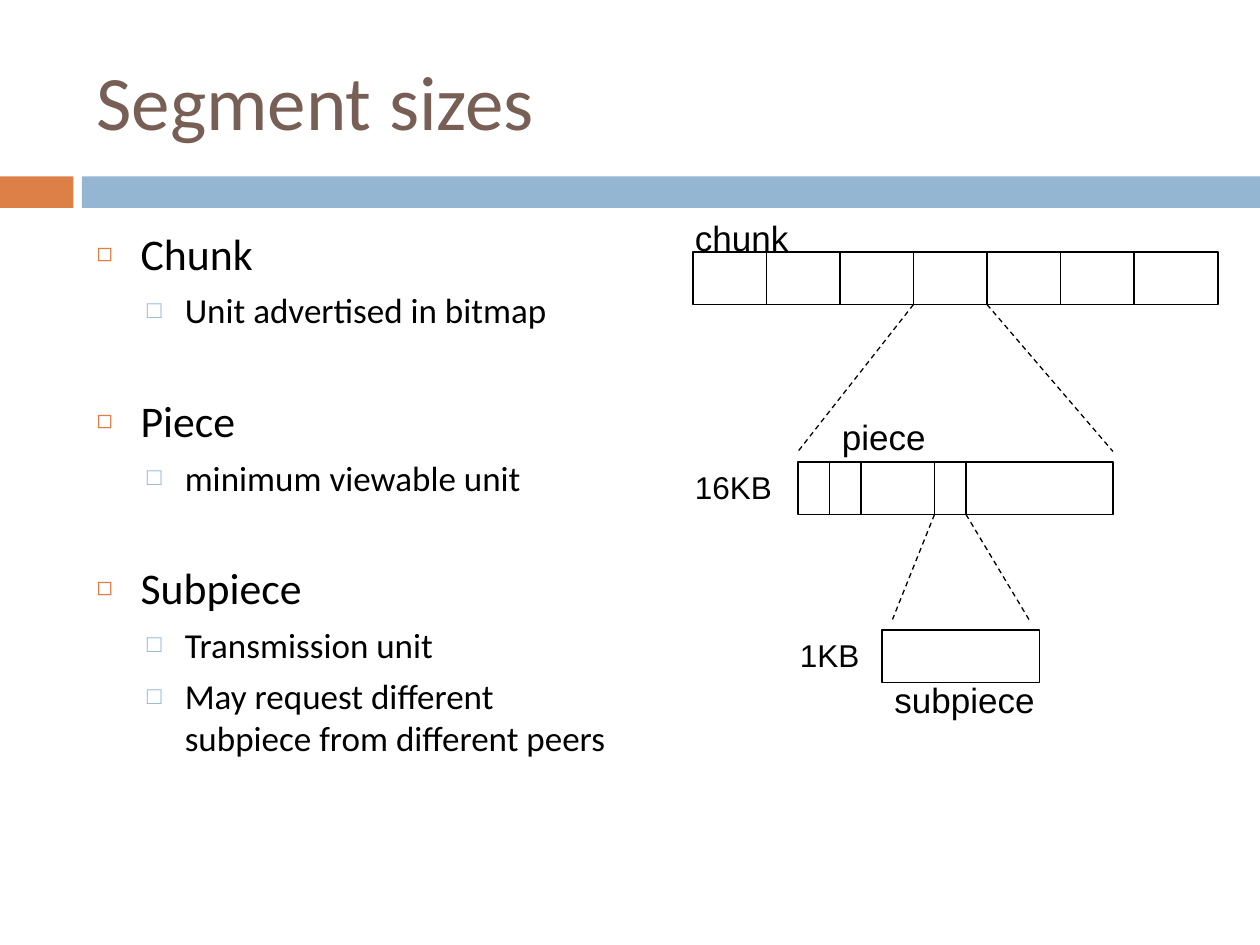
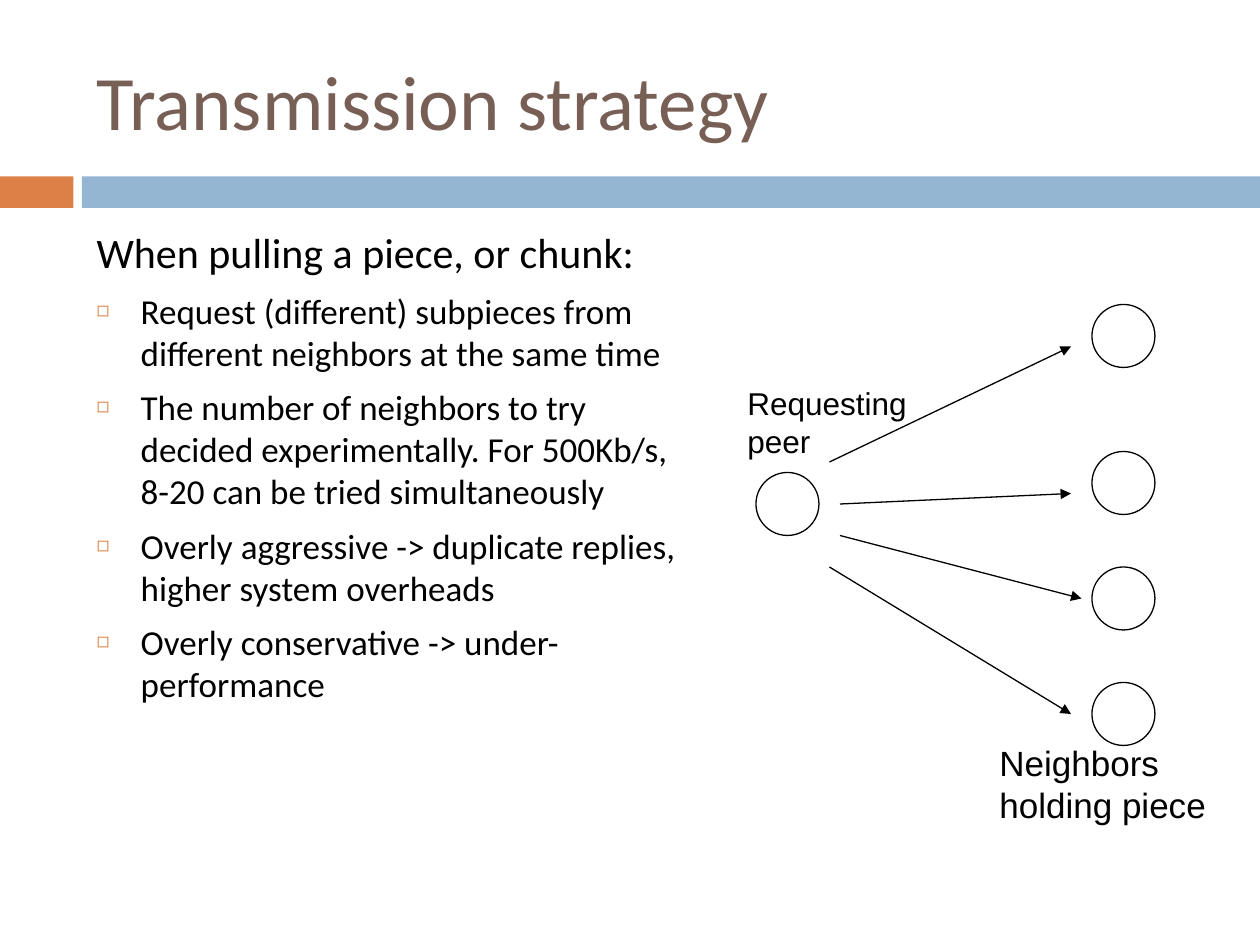
from lxml import etree
from pptx import Presentation
from pptx.dml.color import RGBColor
from pptx.enum.dml import MSO_LINE
from pptx.enum.shapes import MSO_CONNECTOR, MSO_SHAPE
from pptx.enum.text import MSO_ANCHOR, MSO_AUTO_SIZE, PP_ALIGN
from pptx.oxml.ns import qn
from pptx.util import Pt

RECTANGLE, OVAL = MSO_SHAPE.RECTANGLE, MSO_SHAPE.OVAL
STRAIGHT, DASH = MSO_CONNECTOR.STRAIGHT, MSO_LINE.DASH
LEFT, TOP, MIDDLE = PP_ALIGN.LEFT, MSO_ANCHOR.TOP, MSO_ANCHOR.MIDDLE
NO_AUTOFIT = MSO_AUTO_SIZE.NONE

BLACK, BROWN, ORANGE, BLUE = "000000", "775F55", "DD8047", "94B6D2"
HEADING_FONT, LABEL_FONT = "Calibri", "Arial"

# Bullet: character, colour, size in percent
MAIN_BULLET = ("◻", ORANGE, 60)
SUB_BULLET = ("□", BLUE, 70)

BAR_HEIGHT = 30
CALLOUT_GAP = 6
PEER_SIZE = 36


def rgb(color):
    return RGBColor.from_string(color)


def place(shape, left, top, width, height):
    shape.left, shape.top = Pt(left), Pt(top)
    shape.width, shape.height = Pt(width), Pt(height)


def set_bullet(para, bullet, margin, hanging):
    properties = para._p.get_or_add_pPr()
    properties.set("marL", str(Pt(margin)))
    properties.set("indent", str(-Pt(hanging)))
    if bullet is None:
        etree.SubElement(properties, qn("a:buNone"))
        return
    character, color, percent = bullet
    fill = etree.SubElement(properties, qn("a:buClr"))
    etree.SubElement(fill, qn("a:srgbClr"), val=color)
    etree.SubElement(properties, qn("a:buSzPct"), val=str(percent * 1000))
    etree.SubElement(properties, qn("a:buChar"), char=character)


def write(frame, text, size=20, color=BLACK, font=HEADING_FONT, before=0, level=0):
    """Add one formatted paragraph, using the first one if the frame is empty."""
    para = frame.add_paragraph() if frame.text else frame.paragraphs[0]
    para.level = level
    para.alignment = LEFT
    para.space_before = Pt(before)
    span = para.add_run()
    span.text = text
    span.font.size = Pt(size)
    span.font.name = font
    span.font.color.rgb = rgb(color)
    return para


def write_item(frame, text, size=20, before=7, bullet=MAIN_BULLET):
    para = write(frame, text, size=size, before=before)
    set_bullet(para, bullet, margin=25.2, hanging=25.2)


def write_subitem(frame, text):
    para = write(frame, text, before=5.5, level=1)
    set_bullet(para, SUB_BULLET, margin=50.4, hanging=21.6)


def add_label(page, text, left, top, width, height, size=20):
    box = page.shapes.add_textbox(Pt(left), Pt(top), Pt(width), Pt(height))
    box.text_frame.word_wrap = True
    write(box.text_frame, text, size=size, font=LABEL_FONT, before=2)


def add_outline(page, kind, left, top, width, height):
    shape = page.shapes.add_shape(kind, Pt(left), Pt(top), Pt(width), Pt(height))
    shape.shadow.inherit = False
    shape.fill.background()
    shape.line.color.rgb = rgb(BLACK)
    shape.line.width = Pt(0.75)
    return shape


def add_line(page, start, end, dash=None, arrow=False):
    ends = [Pt(value) for value in (*start, *end)]
    connector = page.shapes.add_connector(STRAIGHT, *ends)
    connector.line.color.rgb = rgb(BLACK)
    connector.line.width = Pt(0.75)
    if dash is not None:
        connector.line.dash_style = dash
    properties = connector.element.spPr
    if arrow:
        etree.SubElement(properties.find(qn("a:ln")), qn("a:tailEnd"), type="triangle")
    etree.SubElement(properties, qn("a:effectLst"))


def add_bar(page, left, top, width, dividers=()):
    """Draw a segment bar, split at the given x positions."""
    add_outline(page, RECTANGLE, left, top, width, BAR_HEIGHT)
    for x in dividers:
        add_line(page, (x, top), (x, top + BAR_HEIGHT))


def add_zoom(page, segment, bar_top, target, target_top):
    """Dashed lines from a segment of one bar to the wider bar below."""
    for start_x, end_x in zip(segment, target):
        add_line(page, (start_x, bar_top + BAR_HEIGHT),
                 (end_x, target_top - CALLOUT_GAP), dash=DASH)


def add_master_bands(deck, page):
    """Draw the two bands and move them to the slide master."""
    tree = deck.slide_master.shapes.element
    for left, width, color in ((0, 42, ORANGE), (46.8, 673.2, BLUE)):
        band = add_outline(page, RECTANGLE, left, 100.8, width, 18)
        band.fill.solid()
        band.fill.fore_color.rgb = rgb(color)
        band.line.fill.background()
        tree.insert(2, band.element)


def add_page(deck, title, body_width):
    """Add a titled slide and return it with the text frame of its body."""
    page = deck.slides.add_slide(deck.slide_layouts[1])
    heading, body = page.shapes.title, page.placeholders[1]
    place(heading, 48, 18, 642, 78)
    place(body, 48, 126, body_width, 356)
    for holder, anchor in ((heading, MIDDLE), (body, TOP)):
        holder.text_frame.word_wrap = True
        holder.text_frame.auto_size = NO_AUTOFIT
        holder.text_frame.vertical_anchor = anchor
    write(heading.text_frame, title, size=44, color=BROWN)
    return page, body.text_frame


def build_segment_sizes(deck):
    page, body = add_page(deck, "Segment sizes", 317.5)
    units = (
        ("Chunk", ["Unit advertised in bitmap"]),
        ("Piece", ["minimum viewable unit"]),
        ("Subpiece", ["Transmission unit",
                      "May request different subpiece from different peers"]),
    )
    for index, (unit, facts) in enumerate(units):
        write_item(body, unit, size=25, before=36 if index else 7)
        for fact in facts:
            write_subitem(body, fact)

    chunk_top, piece_top, subpiece_top = 144, 264, 360
    chunk_dividers = [396 + 42 * step for step in range(1, 7)]
    piece_dividers = [474, 492, 534, 552]
    add_bar(page, 396, chunk_top, 300, chunk_dividers)
    add_bar(page, 456, piece_top, 180, piece_dividers)
    add_bar(page, 504, subpiece_top, 90)
    add_zoom(page, chunk_dividers[2:4], chunk_top, (456, 636), piece_top)
    add_zoom(page, piece_dividers[2:], piece_top, (510, 588), subpiece_top)

    add_label(page, "16KB", 390, piece_top, 60, 28.8, size=18)
    add_label(page, "1KB", 450, subpiece_top, 60, 28.8, size=18)
    add_label(page, "chunk", 390, 120, 90, 31)
    add_label(page, "piece", 474, 234, 96, 31)
    add_label(page, "subpiece", 504, 384, 108, 31)
    return page


def build_transmission_strategy(deck):
    page, body = add_page(deck, "Transmission strategy", 353.5)
    write_item(body, "When pulling a piece, or chunk:", size=24, bullet=None)
    for advice in (
        "Request (different) subpieces from different neighbors at the same time",
        "The number of neighbors to try decided experimentally. "
        "For 500Kb/s, 8-20 can be tried simultaneously",
        "Overly aggressive -> duplicate replies, higher system overheads",
        "Overly conservative -> under-performance",
    ):
        write_item(body, advice)

    add_outline(page, OVAL, 432, 270, PEER_SIZE, PEER_SIZE)
    # Neighbor top, then request arrow start and end
    requests = (
        (174, (474, 264), (612, 198)),
        (258, (480, 288), (612, 282)),
        (324, (480, 306), (618, 342)),
        (390, (474, 324), (612, 408)),
    )
    for neighbor_top, start, end in requests:
        add_outline(page, OVAL, 624, neighbor_top, PEER_SIZE, PEER_SIZE)
        add_line(page, start, end, arrow=True)
    add_label(page, "Neighbors holding piece", 564, 420, 138, 55.4)
    add_label(page, "Requesting peer", 420, 216, 108, 50.4, size=18)


def main():
    deck = Presentation()
    deck.slide_width, deck.slide_height = Pt(720), Pt(540)
    first_page = build_segment_sizes(deck)
    add_master_bands(deck, first_page)
    build_transmission_strategy(deck)
    deck.save("out.pptx")


if __name__ == "__main__":
    main()
